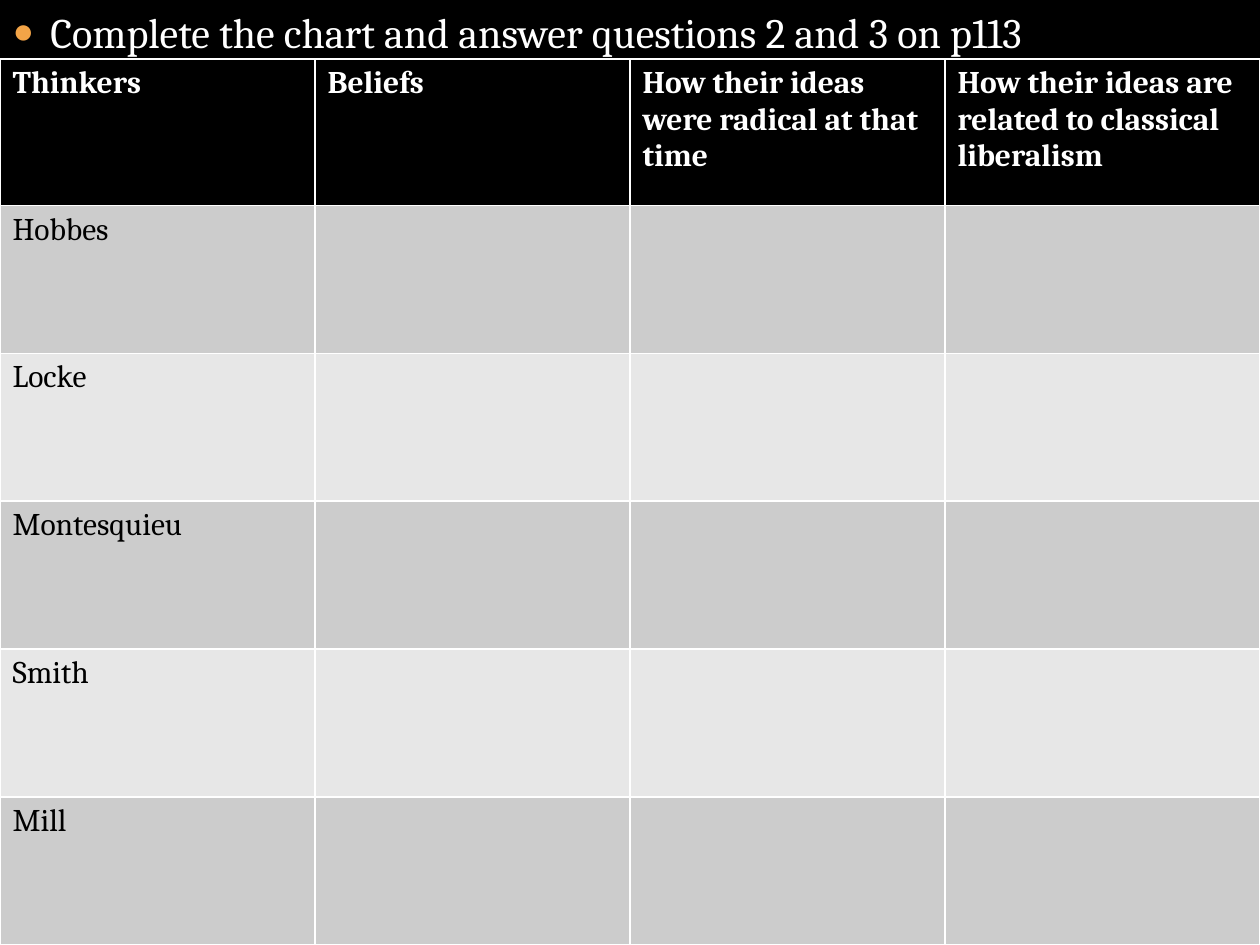
from lxml.etree import SubElement
from pptx import Presentation
from pptx.dml.color import RGBColor
from pptx.enum.text import MSO_ANCHOR, MSO_AUTO_SIZE
from pptx.oxml import parse_xml
from pptx.oxml.ns import nsdecls, qn
from pptx.util import Inches, Pt

COLORS = {
    "background": "000000",
    "light": "FFFFFF",
    "dark": "000000",
    "bullet": "F3A447",
    "odd_row": "CCCCCC",
    "even_row": "E7E7E7",
}
HEADINGS = [
    "Thinkers",
    "Beliefs",
    "How their ideas were radical at that time",
    "How their ideas are related to classical liberalism",
]
THINKERS = ["Hobbes", "Locke", "Montesquieu", "Smith", "Mill"]


class Worksheet:
    font = "Cambria"

    def __init__(self, deck):
        self.width, self.height = deck.slide_width, deck.slide_height
        self.slide = deck.slides.add_slide(deck.slide_layouts[1])
        heading = self.slide.shapes.title.element
        heading.getparent().remove(heading)
        backdrop = self.slide.background.fill
        backdrop.solid()
        backdrop.fore_color.rgb = self.color("background")

    def color(self, role):
        return RGBColor.from_string(COLORS[role])

    def add_text(self, paragraph, text, size, role, bold=False):
        run = paragraph.add_run()
        run.text = text
        run.font.name = self.font
        run.font.size = Pt(size)
        run.font.bold = bold
        run.font.color.rgb = self.color(role)

    def instruction(self, text, height_share):
        body = self.slide.placeholders[1]
        body.left, body.top = 0, 0
        body.width, body.height = self.width, int(self.height * height_share)
        frame = body.text_frame
        frame.word_wrap = True
        frame.auto_size = MSO_AUTO_SIZE.NONE
        frame.vertical_anchor = MSO_ANCHOR.TOP
        paragraph = frame.paragraphs[0]
        paragraph.space_before = Pt(6)
        self.add_text(paragraph, text, 24, "light")
        self.bullet(paragraph)

    def bullet(self, paragraph):
        props = paragraph._p.get_or_add_pPr()
        props.set("marL", str(Inches(0.3)))
        props.set("indent", str(-Inches(0.3)))
        tint = SubElement(props, qn("a:buClr"))
        SubElement(tint, qn("a:srgbClr"), val=COLORS["bullet"])
        SubElement(props, qn("a:buSzPct"), val="85000")
        SubElement(props, qn("a:buFont"), typeface="Arial")
        SubElement(props, qn("a:buChar"), char="●")

    def chart_to_complete(self, headings, thinkers, top, header_height):
        rows, columns = len(thinkers) + 1, len(headings)
        height = self.height - top
        grid = self.slide.shapes.add_table(
            rows, columns, 0, top, self.width, height
        ).table
        for column in grid.columns:
            column.width = self.width // columns
        for row in grid.rows:
            row.height = (height - header_height) // len(thinkers)
        grid.rows[0].height = header_height
        for column, heading in enumerate(headings):
            self.cell(grid.cell(0, column), "background", heading, "light", True)
        for row, thinker in enumerate(thinkers, 1):
            band = "odd_row" if row % 2 else "even_row"
            for column in range(columns):
                label = "" if column else thinker
                self.cell(grid.cell(row, column), band, label, "dark")

    def cell(self, cell, band, text, role, bold=False):
        cell.fill.solid()
        cell.fill.fore_color.rgb = self.color(band)
        if text:
            self.add_text(cell.text_frame.paragraphs[0], text, 18, role, bold)
        props = cell._tc.get_or_add_tcPr()
        for place, side in enumerate("LRTB"):
            props.insert(place, parse_xml(
                f'<a:ln{side} {nsdecls("a")} w="{Pt(1)}"><a:solidFill>'
                f'<a:srgbClr val="{COLORS["light"]}"/></a:solidFill></a:ln{side}>'
            ))


def main():
    deck = Presentation()
    deck.slide_width, deck.slide_height = Inches(10), Inches(7.5)
    worksheet = Worksheet(deck)
    worksheet.instruction(
        "Complete the chart and answer questions 2 and 3 on p113", 0.92
    )
    worksheet.chart_to_complete(HEADINGS, THINKERS, Inches(0.47), Inches(1.16))
    deck.save("out.pptx")


if __name__ == "__main__":
    main()
